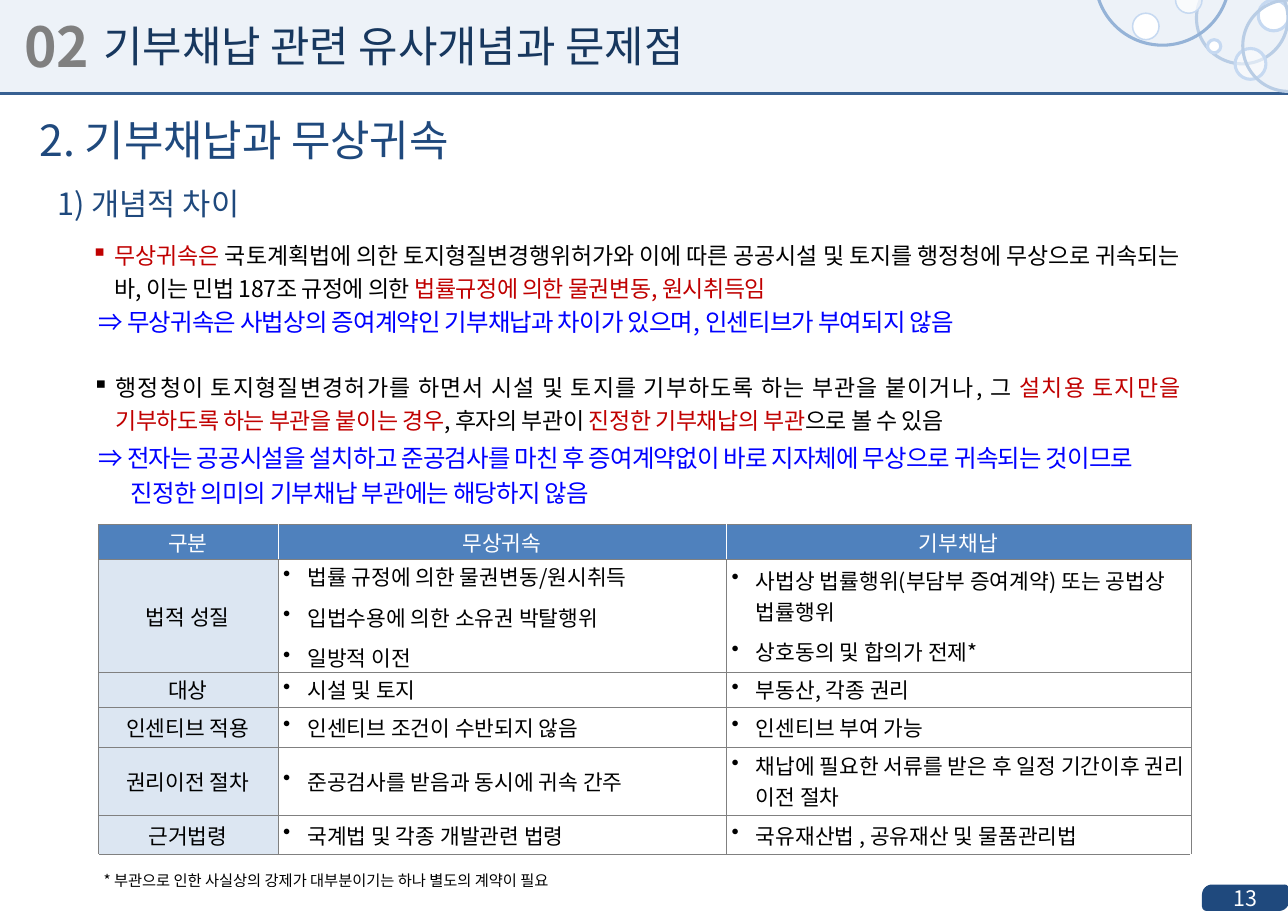
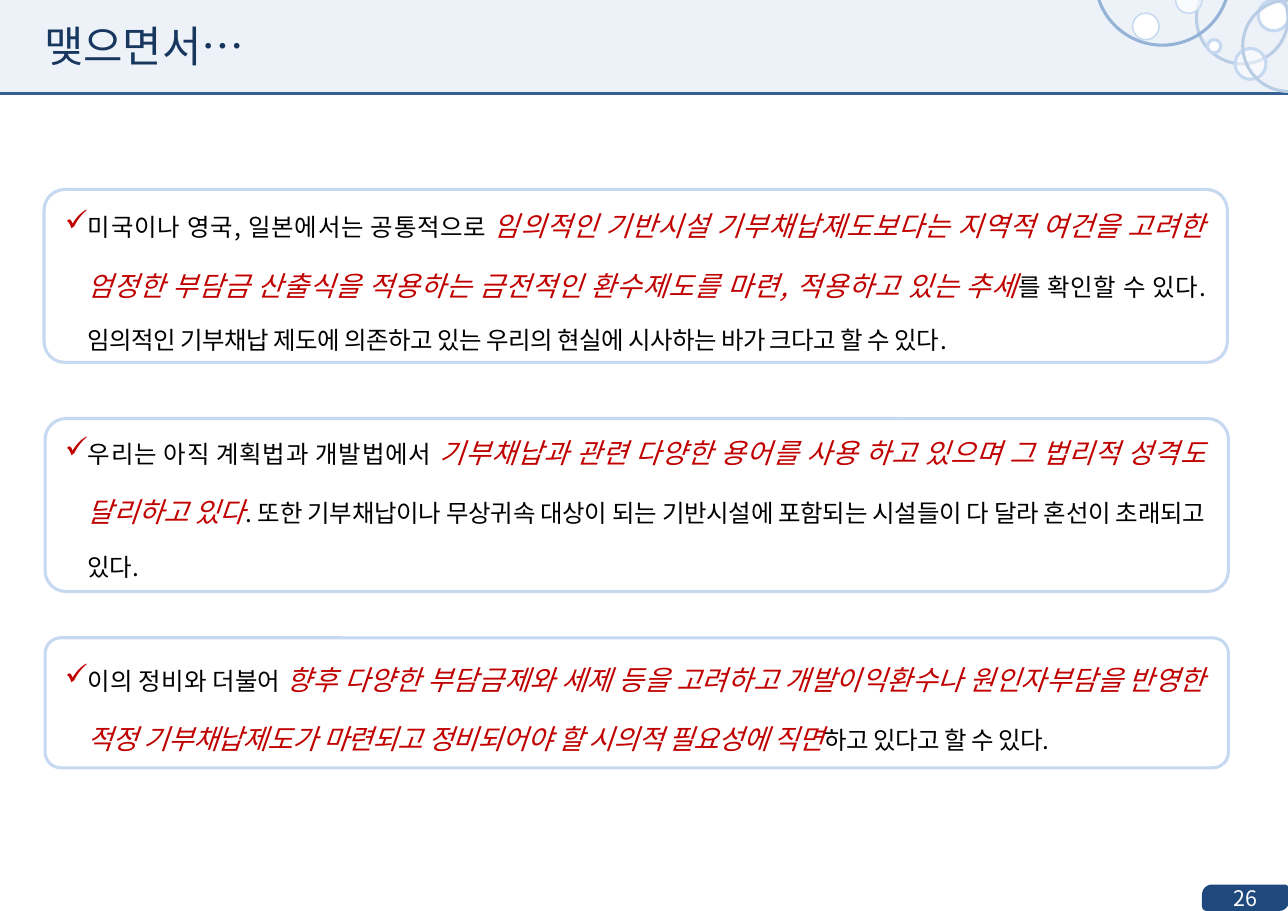
from lxml import etree
from pptx import Presentation, util as u
from pptx.dml.color import RGBColor
from pptx.enum import shapes, text
from pptx.oxml.ns import qn

FONT = "Noto Sans CJK KR"
WIDTH, HEIGHT = 11.69, 8.27
BLACK, WHITE, GREY = "000000", "FFFFFF", "808080"
NAVY, TITLE_NAVY, RED, BLUE = "1F497D", "17375E", "C00000", "0000FF"
PALE, SKY, HEADER = "DCE6F2", "C6D9F1", "4F81BD"
LEFT, CENTER, JUSTIFY = text.PP_ALIGN.LEFT, text.PP_ALIGN.CENTER, text.PP_ALIGN.JUSTIFY
TOP, MIDDLE = text.MSO_ANCHOR.TOP, text.MSO_ANCHOR.MIDDLE
KEY = {"color": RED}
STRESS = {"color": RED, "size": 18, "italic": True}

# left, top, diameter, fill, opacity, line colour, line width
BUBBLES = [
    (11.42, 0, 0.28, WHITE, 100, SKY, 2),
    (10.86, -0.25, 0.83, None, 100, "B9CDE5", 2),
    (10.96, 0.36, 0.12, WHITE, 100, SKY, 2),
    (11.21, 0.44, 0.28, WHITE, 50, SKY, 2),
    (10.28, 0.12, 0.24, WHITE, 100, SKY, 1),
    (10.67, -0.12, 0.24, WHITE, 70, SKY, 1),
    (11.28, 0, 0.83, None, 100, "B9CDE5", 2),
    (9.94, -0.81, 1.22, None, 100, "95B3D7", 2),
]

COLUMNS = [1.63, 4.07, 4.22]
ROW_HEIGHTS = [0.32, 1.02, 0.32, 0.36, 0.62, 0.36, 0.3]
HEADINGS = ["구분", "무상귀속", "기부채납"]
COMPARISON = [
    ("법적 성질",
     ["법률 규정에 의한 물권변동/원시취득", "입법수용에 의한 소유권 박탈행위", "일방적 이전"],
     ["사법상 법률행위(부담부 증여계약) 또는 공법상 법률행위", "상호동의 및 합의가 전제*"]),
    ("대상", ["시설 및 토지"], ["부동산, 각종 권리"]),
    ("인센티브 적용", ["인센티브 조건이 수반되지 않음"], ["인센티브 부여 가능"]),
    ("권리이전 절차", ["준공검사를 받음과 동시에 귀속 간주"],
     ["채납에 필요한 서류를 받은 후 일정 기간이후 권리 이전 절차"]),
    ("근거법령", ["국계법 및 각종 개발관련 법령"], ["국유재산법 , 공유재산 및 물품관리법"]),
]
FOOTNOTE = "* 부관으로 인한 사실상의 강제가 대부분이기는 하나 별도의 계약이 필요"

CONCLUSIONS = [
    [("미국이나 영국, 일본에서는 공통적으로 ", {}),
     ("임의적인 기반시설 기부채납제도보다는 지역적 여건을 고려한 엄정한 부담금 산출식을 "
      "적용하는 금전적인 환수제도를 마련, 적용하고 있는 추세", STRESS),
     ("를 확인할 수 있다. 임의적인 기부채납 제도에 의존하고 있는 우리의 현실에 "
      "시사하는 바가 크다고 할 수 있다.", {})],
    [("우리는 아직 계획법과 개발법에서 ", {}),
     ("기부채납과 관련 다양한 용어를 사용 하고 있으며 그 법리적 성격도 달리하고 있다", STRESS),
     (". 또한 기부채납이나 무상귀속 대상이 되는 기반시설에 포함되는 시설들이 다 달라 "
      "혼선이 초래되고 있다.", {})],
    [("이의 정비와 더불어 ", {}),
     ("향후 다양한 부담금제와 세제 등을 고려하고 개발이익환수나 원인자부담을 반영한 "
      "적정 기부채납제도가 마련되고 정비되어야 할 시의적 필요성에 직면", STRESS),
     ("하고 있다고 할 수 있다.", {})],
]


def rgb(value):
    return RGBColor.from_string(value)


def box(left, top, width, height):
    return [u.Inches(v) for v in (left, top, width, height)]


def add_xml(parent, tag, **attributes):
    return etree.SubElement(parent, qn(tag), attributes)


# Text
def write(para, runs, size, color=BLACK, bold=False, align=LEFT, hang=0, line=None,
          before=None, after=None, bullet=None, bullet_color=None, bullet_size=100, tracking=0):
    para.alignment = align
    para.line_spacing = line
    para.space_before = None if before is None else u.Pt(before)
    para.space_after = None if after is None else u.Pt(after)
    font = para.font
    font.name, font.size, font.bold = FONT, u.Pt(size), bold
    font.color.rgb = rgb(color)
    props = para._p.get_or_add_pPr()
    base = props.find(qn("a:defRPr"))
    add_xml(base, "a:ea", typeface=FONT)
    if tracking:
        base.set("spc", str(round(tracking * 100)))
    if hang:
        props.set("marL", str(u.Inches(hang)))
        props.set("indent", str(-u.Inches(hang)))
    if bullet:
        marks = etree.Element("marks")
        add_xml(add_xml(marks, "a:buClr"), "a:srgbClr", val=bullet_color or color)
        add_xml(marks, "a:buSzPct", val=str(bullet_size * 1000))
        add_xml(marks, "a:buChar", char=bullet)
        for mark in list(marks):
            base.addprevious(mark)
    for words, change in [(runs, {})] if isinstance(runs, str) else runs:
        run = para.add_run()
        run.text = words
        if "color" in change:
            run.font.color.rgb = rgb(change["color"])
        if "size" in change:
            run.font.size = u.Pt(change["size"])
        if "italic" in change:
            run.font.italic = change["italic"]


def add_text(slide, place, paragraphs, size, anchor=TOP, insets=(0.1, 0.05), **style):
    frame = slide.shapes.add_textbox(*box(*place)).text_frame
    frame.word_wrap = True
    frame.vertical_anchor = anchor
    frame.margin_left = frame.margin_right = u.Inches(insets[0])
    frame.margin_top = frame.margin_bottom = u.Inches(insets[1])
    for i, runs in enumerate(paragraphs):
        para = frame.add_paragraph() if i else frame.paragraphs[0]
        write(para, runs, size, **style)


# Shapes
def add_shape(parent, kind, place, fill=None, opacity=100, line=None, weight=1):
    shape = parent.shapes.add_shape(kind, *box(*place))
    shape.shadow.inherit = False
    if fill:
        shape.fill.solid()
        shape.fill.fore_color.rgb = rgb(fill)
        if opacity < 100:
            color = shape._element.spPr.find(qn("a:solidFill"))[0]
            add_xml(color, "a:alpha", val=str(opacity * 1000))
    else:
        shape.fill.background()
    if line:
        shape.line.color.rgb = rgb(line)
        shape.line.width = u.Pt(weight)
    else:
        shape.line.fill.background()
    return shape


# Parts shared by every slide
def add_frame(slide, title, title_left, page):
    rectangle = shapes.MSO_SHAPE.RECTANGLE
    add_shape(slide, rectangle, (0, 0, WIDTH, 0.84), PALE, 50)
    rule = slide.shapes.add_connector(
        shapes.MSO_CONNECTOR.STRAIGHT, 0, u.Inches(0.85), u.Inches(WIDTH), u.Inches(0.85))
    rule.line.color.rgb = rgb("376092")
    rule.line.width = u.Pt(1.5)
    add_xml(rule._element.spPr, "a:effectLst")
    bubbles = slide.shapes.add_group_shape()
    for left, top, size, *look in BUBBLES:
        add_shape(bubbles, shapes.MSO_SHAPE.OVAL, (left, top, size, size), *look)
    add_shape(slide, rectangle, (0, 0.88, WIDTH, HEIGHT - 0.88), WHITE)
    add_text(slide, (title_left, 0.14, 6, 0.54), [title], 28, color=TITLE_NAVY,
             insets=(0.07, 0.04))

    badge = add_shape(slide, shapes.MSO_SHAPE.ROUND_2_DIAG_RECTANGLE,
                      (10.91, 8.03, 0.79, 0.24), NAVY)
    badge.adjustments[0], badge.adjustments[1] = 0.17, 0.38
    badge._element.spPr.find(qn("a:xfrm")).set("flipH", "1")
    badge.text_frame.vertical_anchor = MIDDLE
    write(badge.text_frame.paragraphs[0], str(page), 14, color=WHITE, align=CENTER)


# Table
def set_cell(cell, paragraphs, fill, borders, size=14, **style):
    cell.vertical_anchor = MIDDLE
    cell.margin_left = cell.margin_right = u.Inches(0.05)
    cell.margin_top = cell.margin_bottom = u.Inches(0.01)
    cell.fill.solid()
    cell.fill.fore_color.rgb = rgb(fill)
    props = cell._tc.get_or_add_tcPr()
    for i, (side, (color, weight)) in enumerate(zip("LRTB", borders)):
        edge = etree.Element(qn(f"a:ln{side}"), w=str(u.Pt(weight)))
        add_xml(add_xml(edge, "a:solidFill"), "a:srgbClr", val=color)
        props.insert(i, edge)
    for i, words in enumerate(paragraphs):
        para = cell.text_frame.add_paragraph() if i else cell.text_frame.paragraphs[0]
        write(para, words, size, **style)


def add_comparison(slide):
    place = box(0.89, 4.76, sum(COLUMNS), sum(ROW_HEIGHTS))
    table = slide.shapes.add_table(len(ROW_HEIGHTS), len(COLUMNS), *place).table
    table.first_row = table.horz_banding = False
    for column, width in zip(table.columns, COLUMNS):
        column.width = u.Inches(width)
    for row, height in zip(table.rows, ROW_HEIGHTS):
        row.height = u.Inches(height)

    grey, split, blank = (GREY, 0.25), (WHITE, 0.25), (WHITE, 1)
    last = len(COLUMNS) - 1
    for c, heading in enumerate(HEADINGS):
        borders = (split if c else grey, split if c < last else grey, grey, grey)
        set_cell(table.cell(0, c), [heading], HEADER, borders, color=WHITE, align=CENTER)
    for r, (topic, *details) in enumerate(COMPARISON, 1):
        set_cell(table.cell(r, 0), [topic], PALE, [grey] * 4, align=CENTER)
        for c, points in enumerate(details, 1):
            set_cell(table.cell(r, c), points, WHITE, [grey] * 4,
                     bullet="•", hang=0.22, after=6)
    bottom = len(ROW_HEIGHTS) - 1
    note = table.cell(bottom, 0)
    note.merge(table.cell(bottom, last))
    set_cell(note, [FOOTNOTE], WHITE, (blank, blank, grey, blank), size=10,
             align=JUSTIFY, line=1.6)
    for c in range(1, last + 1):
        set_cell(table.cell(bottom, c), [], WHITE, (blank, blank, grey, blank))


# Slides
def build_difference(slide):
    add_frame(slide, "기부채납 관련 유사개념과 문제점", 0.87, 13)
    add_text(slide, (0.12, 0.1, 0.85, 0.63), ["02"], 36, color=GREY, bold=True, anchor=MIDDLE)
    add_text(slide, (0.26, 0.98, 10.78, 0.55), ["2. 기부채납과 무상귀속"], 28, color=NAVY)
    add_text(slide, (0.42, 1.63, 10.78, 0.55), ["1) 개념적 차이"], 20, color=NAVY)
    add_comparison(slide)

    point = dict(size=15, align=JUSTIFY, hang=0.21, line=1.2, after=8, bullet="▪", tracking=-0.3)
    add_text(slide, (0.73, 2.09, 10.07, 0.55), [[
        ("무상귀속은", KEY),
        (" 국토계획법에 의한 토지형질변경행위허가와 이에 따른 공공시설 및 토지를 행정청에 "
         "무상으로 귀속되는 바, 이는 민법 187조 규정에 의한 ", {}),
        ("법률규정에 의한 물권변동, 원시취득임", KEY)]], bullet_color=RED, **point)
    add_text(slide, (0.74, 3.29, 10.07, 0.63), [[
        ("행정청이 토지형질변경허가를 하면서 시설 및 토지를 기부하도록 하는 부관을 "
         "붙이거나, 그 ", {}),
        ("설치용 토지만을 기부하도록 하는 부관을 붙이는 경우", KEY),
        (", 후자의 부관이 ", {}),
        ("진정한 기부채납의 부관", KEY),
        ("으로 볼 수 있음", {})]], **point)

    result = dict(size=16, color=BLUE, hang=0.29, before=3.2, after=6, tracking=-0.5)
    add_text(slide, (0.8, 2.79, 10.17, 0.32), [
        "⇒ 무상귀속은 사법상의 증여계약인 기부채납과 차이가 있으며, 인센티브가 부여되지 않음"],
        line=0.8, **result)
    add_text(slide, (0.8, 3.92, 10.17, 0.73), [
        "⇒ 전자는 공공시설을 설치하고 준공검사를 마친 후 증여계약없이 바로 지자체에 무상으로 "
        "귀속되는 것이므로 진정한 의미의 기부채납 부관에는 해당하지 않음"],
        line=1.2, **result)


def build_closing(slide):
    add_frame(slide, "맺으면서…", 0.33, 26)
    add_text(slide, (0.49, 1.61, 10.55, 0.43), CONCLUSIONS, 16, align=JUSTIFY, hang=0.21,
             line=1.8, after=36, bullet="✓", bullet_color=RED, bullet_size=120, tracking=-0.3)
    for left, top, height in [(0.4, 1.72, 1.57), (0.41, 3.8, 1.57), (0.41, 5.79, 1.18)]:
        outline = add_shape(slide, shapes.MSO_SHAPE.ROUNDED_RECTANGLE,
                            (left, top, 10.74, height), line=SKY, weight=2)
        outline.adjustments[0] = 0.12


def main():
    deck = Presentation()
    deck.slide_width, deck.slide_height = u.Inches(WIDTH), u.Inches(HEIGHT)
    for build in (build_difference, build_closing):
        build(deck.slides.add_slide(deck.slide_layouts[6]))
    deck.save("out.pptx")


if __name__ == "__main__":
    main()
